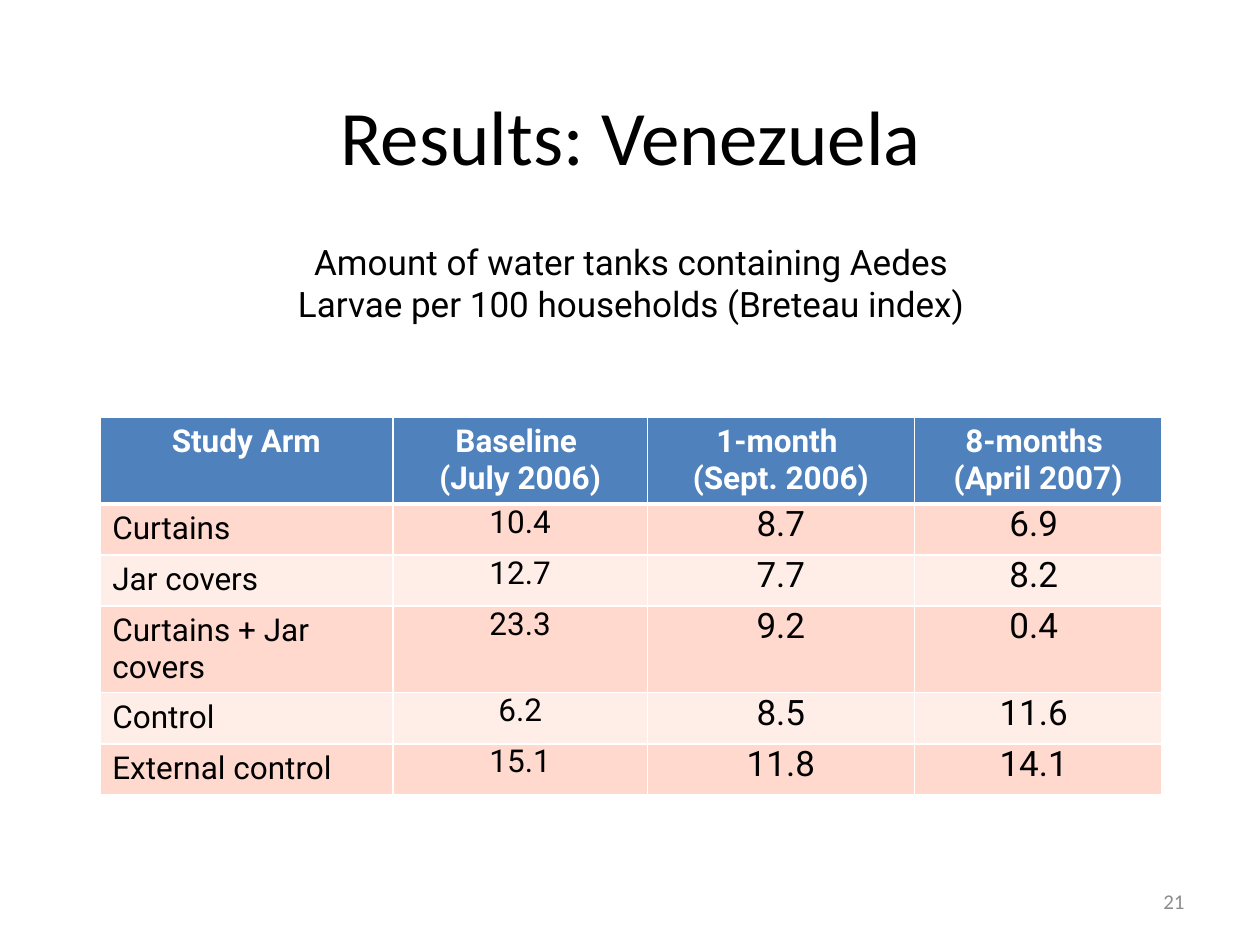
from lxml import etree
from pptx import Presentation
from pptx.dml.color import RGBColor
from pptx.enum.text import MSO_ANCHOR, PP_ALIGN
from pptx.oxml.ns import qn
from pptx.util import Pt

LEFT, CENTER, RIGHT = PP_ALIGN.LEFT, PP_ALIGN.CENTER, PP_ALIGN.RIGHT
MIDDLE = MSO_ANCHOR.MIDDLE

# Content
TITLE = "Results: Venezuela"
SUBTITLE = ("Amount of water tanks containing Aedes Larvae "
            "per 100 households (Breteau index)")
PAGE = "21"
ROWS = [
    ("Study Arm", "Baseline \n(July 2006)", "1-month \n(Sept. 2006)",
     "8-months \n(April 2007)"),
    ("Curtains", "10.4", "8.7", "6.9 "),
    ("Jar covers", "12.7", "7.7", "8.2 "),
    ("Curtains + Jar covers", "23.3", "9.2", "0.4 "),
    ("Control", "6.2", "8.5", "11.6 "),
    ("External control", "15.1", "11.8", "14.1 "),
]

THEME = {
    "heading": "Calibri", "body": "Roboto",
    "title": 44, "large": 20, "cell": 18, "page": 12,
    "text": "000000", "light": "FFFFFF", "muted": "8C8C8C",
    "header": "4F81BD", "bands": ("FFD9CE", "FFEDE8"),
}

# Layout in points
TITLE_BOX = (36.5, 23, 648, 108.5)
SUBTITLE_BOX = (145.5, 134, 430.5, 55.5)
PAGE_BOX = (516, 500.5, 168, 28.5)
TABLE_LEFT, TABLE_TOP = 57, 238.5
COL_WIDTHS = (167.5, 145.5, 152.5, 141.5)
ONE_LINE, TWO_LINES = 29.2, 48.8
ROW_HEIGHTS = (TWO_LINES, ONE_LINE, ONE_LINE, TWO_LINES, ONE_LINE, ONE_LINE)


def write(tf, text, font, size, color, align=CENTER, bold=False):
    tf.text = text
    tf.word_wrap = True
    for p in tf.paragraphs:
        p.alignment = align
        for r in p.runs:
            r.font.name, r.font.size, r.font.bold = font, Pt(size), bold
            r.font.color.rgb = RGBColor.from_string(color)


def add_borders(cell, widths):
    """Draw light borders; widths run left, right, top, bottom."""
    props = cell._tc.get_or_add_tcPr()
    for i, (side, width) in enumerate(zip("LRTB", widths)):
        ln = etree.Element(qn(f"a:ln{side}"), w=str(Pt(width)))
        fill = etree.SubElement(ln, qn("a:solidFill"))
        etree.SubElement(fill, qn("a:srgbClr"), val=THEME["light"])
        props.insert(i, ln)


prs = Presentation()
prs.slide_width, prs.slide_height = Pt(720), Pt(540)
s = prs.slides.add_slide(prs.slide_layouts[5])

# Title
title = s.shapes.title
title.left, title.top, title.width, title.height = map(Pt, TITLE_BOX)
title.text_frame.vertical_anchor = MIDDLE
write(title.text_frame, TITLE, THEME["heading"], THEME["title"], THEME["text"])

# Results table
table = s.shapes.add_table(
    len(ROWS), len(COL_WIDTHS), Pt(TABLE_LEFT), Pt(TABLE_TOP),
    Pt(sum(COL_WIDTHS)), Pt(sum(ROW_HEIGHTS))).table
for column, width in zip(table.columns, COL_WIDTHS):
    column.width = Pt(width)
for i, (row, height) in enumerate(zip(ROWS, ROW_HEIGHTS)):
    table.rows[i].height = Pt(height)
    header = i == 0
    for j, text in enumerate(row):
        cell = table.cell(i, j)
        cell.fill.solid()
        cell.fill.fore_color.rgb = RGBColor.from_string(
            THEME["header"] if header else THEME["bands"][(i - 1) % 2])
        add_borders(cell, (1, 1, 3 if i == 1 else 1, 3 if header else 1))
        if not header and j > 0:
            cell.margin_left = cell.margin_right = Pt(5)
            cell.margin_top = cell.margin_bottom = 0
        write(cell.text_frame, text, THEME["body"],
              THEME["large"] if not header and j > 1 else THEME["cell"],
              THEME["light"] if header else THEME["text"],
              CENTER if header or j > 0 else LEFT, header)

# Subtitle
sp = s.shapes.add_textbox(*map(Pt, SUBTITLE_BOX))
write(sp.text_frame, SUBTITLE, THEME["body"], THEME["large"], THEME["text"])

# Page number
sp = s.shapes.add_textbox(*map(Pt, PAGE_BOX))
sp.text_frame.vertical_anchor = MIDDLE
write(sp.text_frame, PAGE, THEME["heading"], THEME["page"], THEME["muted"], RIGHT)

prs.save("out.pptx")
